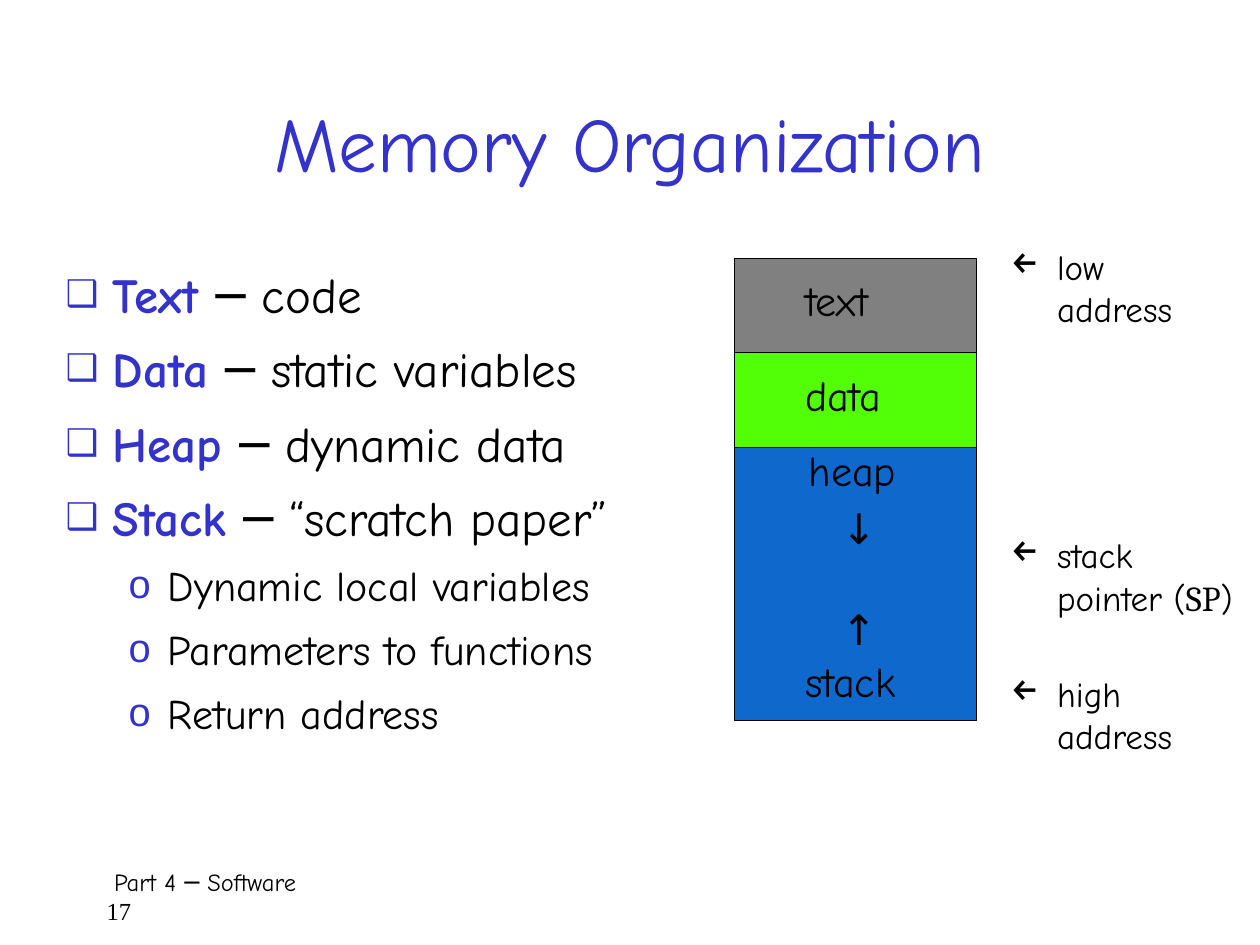
from lxml import etree
from pptx import Presentation
from pptx.dml.color import RGBColor
from pptx.enum.shapes import MSO_SHAPE
from pptx.enum.text import MSO_ANCHOR, MSO_AUTO_SIZE, PP_ALIGN
from pptx.oxml.ns import qn
from pptx.util import Cm, Pt

RECTANGLE = MSO_SHAPE.RECTANGLE
MIDDLE, TOP = MSO_ANCHOR.MIDDLE, MSO_ANCHOR.TOP
NO_AUTOFIT = MSO_AUTO_SIZE.NONE
CENTER, LEFT = PP_ALIGN.CENTER, PP_ALIGN.LEFT

BLACK, BLUE = "000000", "3333CC"
MAIN_FONT, SERIF_FONT, CODE_FONT = "Comic Neue", "Times New Roman", "Cambria"

MEMORY_LEFT, MEMORY_WIDTH = 14.81, 4.88
SEGMENTS = [  # top, height, fill
    (5.21, 1.9, "808080"),
    (7.11, 1.91, "53FF07"),
    (9.02, 5.51, "0F69CC"),
]
SEGMENT_LABELS = [  # text, left, top, width
    ("text", 15.98, 5.41, 2.4),
    ("data", 15.98, 7.32, 2.4),
    ("heap", 16.05, 8.84, 2.4),
    ("stack", 15.98, 13.08, 2.64),
]
ADDRESS_NOTES = [  # top, first line, runs of the second line
    (4.83, "low", [("address", MAIN_FONT)]),
    (10.64, "stack", [("pointer (", MAIN_FONT), ("SP", CODE_FONT), (")", MAIN_FONT)]),
    (13.44, "high", [("address", MAIN_FONT)]),
]
MEMORY_AREAS = [
    ("Text ", "─ code"),
    ("Data ", "─ static variables"),
    ("Heap ", "─ dynamic data"),
    ("Stack ", "─ “scratch paper”"),
]
STACK_CONTENTS = ["Dynamic local variables", "Parameters to functions", "Return address"]


def color(hex_value):
    return RGBColor.from_string(hex_value)


def set_values(target, values):
    for name, value in values.items():
        setattr(target, name, value)


def place(shape, left, top, width, height):
    set_values(shape, {"left": Cm(left), "top": Cm(top),
                       "width": Cm(width), "height": Cm(height)})


def add_run(paragraph, text, size, font=MAIN_FONT, hex_value=BLACK, bold=False):
    run = paragraph.add_run()
    run.text = text
    set_values(run.font, {"size": Pt(size), "name": font, "bold": bold})
    run.font.color.rgb = color(hex_value)


def next_paragraph(frame):
    """Return the empty first paragraph, or a new one after the text."""
    first = frame.paragraphs[0]
    return frame.add_paragraph() if first.runs else first


def set_indent(paragraph, margin, first_line=0):
    properties = paragraph._p.get_or_add_pPr()
    properties.set("marL", str(Cm(margin)))
    properties.set("indent", str(Cm(first_line)))


def set_bullet(paragraph, character, hex_value, percent):
    properties = paragraph._p.get_or_add_pPr()
    bullet_color = etree.SubElement(properties, qn("a:buClr"))
    etree.SubElement(bullet_color, qn("a:srgbClr"), val=hex_value)
    etree.SubElement(properties, qn("a:buSzPct"), val=str(percent * 1000))
    etree.SubElement(properties, qn("a:buChar"), char=character)


def add_text_box(slide, left, top, width, height):
    frame = slide.shapes.add_textbox(Cm(left), Cm(top), Cm(width), Cm(height)).text_frame
    frame.word_wrap = True
    return frame


def add_title(slide):
    title = slide.shapes.title
    place(title, 1.9, 1.27, 21.59, 3.18)
    set_values(title.text_frame, {"vertical_anchor": MIDDLE, "auto_size": NO_AUTOFIT})
    paragraph = title.text_frame.paragraphs[0]
    paragraph.alignment = CENTER
    add_run(paragraph, "Memory Organization", 44, hex_value=BLUE)


def add_list_item(frame, level, size):
    paragraph = next_paragraph(frame)
    set_values(paragraph, {"level": level, "alignment": LEFT, "line_spacing": 1.1,
                           "space_before": Pt(size * 0.2)})
    if level == 0:
        set_indent(paragraph, 0.95, -0.95)
        set_bullet(paragraph, "❑", BLUE, 75)
    else:
        set_indent(paragraph, 2.06, -0.79)
        set_bullet(paragraph, "o", BLUE, 95)
    return paragraph


def add_memory_list(slide):
    body = slide.placeholders[1]
    place(body, 1.07, 5.08, 13.34, 11.86)
    frame = body.text_frame
    set_values(frame, {"vertical_anchor": TOP, "auto_size": NO_AUTOFIT})
    for name, meaning in MEMORY_AREAS:
        paragraph = add_list_item(frame, 0, 28)
        add_run(paragraph, name, 28, hex_value=BLUE, bold=True)
        add_run(paragraph, meaning, 28)
    for content in STACK_CONTENTS:
        add_run(add_list_item(frame, 1, 24), content, 24)


def add_segment(slide, top, height, fill):
    shape = slide.shapes.add_shape(RECTANGLE, Cm(MEMORY_LEFT), Cm(top),
                                   Cm(MEMORY_WIDTH), Cm(height))
    shape.shadow.inherit = False
    shape.fill.solid()
    shape.fill.fore_color.rgb = color(fill)
    shape.line.color.rgb = color(BLACK)
    shape.line.width = Pt(0.75)


def add_segment_label(slide, text, left, top, width):
    frame = add_text_box(slide, left, top, width, 1.45)
    add_run(frame.paragraphs[0], text, 24)


def add_growth_arrows(slide):
    frame = add_text_box(slide, 16.71, 10.01, 1.02, 3.45)
    add_run(next_paragraph(frame), "↓", 24)
    stack_arrow = next_paragraph(frame)
    stack_arrow.space_before = Pt(28.8)
    add_run(stack_arrow, "↑", 24)


def add_address_note(slide, top, first_line, second_line):
    frame = add_text_box(slide, 20.12, top, 5.36, 2.1)
    paragraph = next_paragraph(frame)
    set_indent(paragraph, 0.94, -0.94)
    set_bullet(paragraph, "←", BLACK, 100)
    add_run(paragraph, first_line, 20)
    paragraph = next_paragraph(frame)
    set_indent(paragraph, 0.94)
    for text, font in second_line:
        add_run(paragraph, text, 20, font)


def add_footer(slide):
    frame = add_text_box(slide, 1.9, 17.35, 21.79, 1.27)
    paragraph = next_paragraph(frame)
    set_indent(paragraph, 0.15)
    add_run(paragraph, "Part 4 ─ Software", 14)
    add_run(next_paragraph(frame), "17", 14, SERIF_FONT)


def main():
    presentation = Presentation()
    set_values(presentation, {"slide_width": Cm(25.4), "slide_height": Cm(19.05)})
    slide = presentation.slides.add_slide(presentation.slide_layouts[1])
    add_footer(slide)
    add_title(slide)
    add_memory_list(slide)
    for segment in SEGMENTS:
        add_segment(slide, *segment)
    for label in SEGMENT_LABELS:
        add_segment_label(slide, *label)
    add_growth_arrows(slide)
    for note in ADDRESS_NOTES:
        add_address_note(slide, *note)
    presentation.save("out.pptx")


if __name__ == "__main__":
    main()
